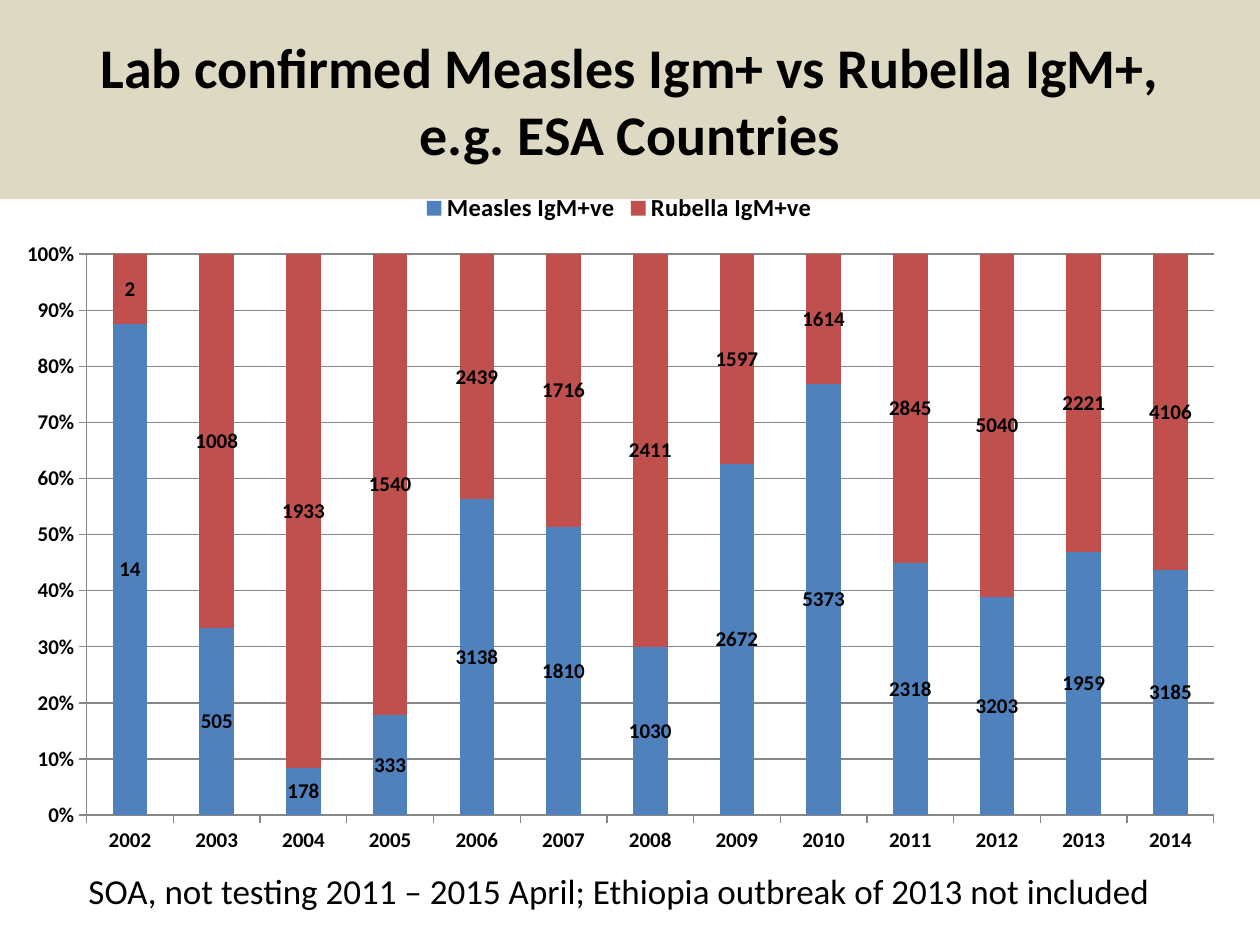
from dataclasses import dataclass

from lxml.etree import SubElement
from pptx import Presentation
from pptx.chart.data import CategoryChartData
from pptx.dml.color import RGBColor
from pptx.enum.chart import XL_CHART_TYPE as ChartType
from pptx.enum.chart import XL_LABEL_POSITION as LabelPosition
from pptx.enum.chart import XL_LEGEND_POSITION as LegendPosition
from pptx.enum.chart import XL_TICK_MARK as TickMark
from pptx.enum.shapes import MSO_SHAPE as Shape
from pptx.enum.text import MSO_ANCHOR as Anchor
from pptx.enum.text import PP_ALIGN as Align
from pptx.oxml.ns import qn
from pptx.util import Inches, Pt

FONT = "Calibri"
BLACK = RGBColor(0x00, 0x00, 0x00)
SAND = RGBColor(0xDD, 0xD9, 0xC3)
BLUE = RGBColor(0x4F, 0x81, 0xBD)
RED = RGBColor(0xC0, 0x50, 0x4D)
GRAY = RGBColor(0x86, 0x86, 0x86)


@dataclass(frozen=True)
class Infection:
    name: str
    cases: tuple[int, ...]
    color: RGBColor


YEARS = [str(year) for year in range(2002, 2015)]
INFECTIONS = (
    Infection(
        "Measles IgM+ve",
        (14, 505, 178, 333, 3138, 1810, 1030, 2672, 5373, 2318, 3203, 1959, 3185),
        BLUE,
    ),
    Infection(
        "Rubella IgM+ve",
        (2, 1008, 1933, 1540, 2439, 1716, 2411, 1597, 1614, 2845, 5040, 2221, 4106),
        RED,
    ),
)
PLOT_AREA = {"x": 0.07, "y": 0.11, "w": 0.91, "h": 0.82}


def style_font(font, size: int, bold: bool) -> None:
    font.name = FONT
    font.size = Pt(size)
    font.bold = bold
    font.color.rgb = BLACK


def write_text(shape, text: str, *, size: int, bold: bool = False,
               anchor: Anchor = Anchor.TOP) -> None:
    frame = shape.text_frame
    frame.word_wrap = True
    frame.vertical_anchor = anchor
    paragraph = frame.paragraphs[0]
    paragraph.text = text
    paragraph.alignment = Align.CENTER
    for run in paragraph.runs:
        style_font(run.font, size, bold)


def place_plot_area(chart) -> None:
    plot_area = chart.plots[0]._element.getparent()
    layout = plot_area.find(qn("c:layout"))
    if layout is None:
        layout = SubElement(plot_area, qn("c:layout"))
        plot_area.insert(0, layout)
    manual = SubElement(layout, qn("c:manualLayout"))
    settings = {"layoutTarget": "inner", "xMode": "edge", "yMode": "edge", **PLOT_AREA}
    for tag, value in settings.items():
        SubElement(manual, qn(f"c:{tag}")).set("val", str(value))


def style_axis(axis) -> None:
    axis.major_tick_mark = TickMark.OUTSIDE
    axis.minor_tick_mark = TickMark.NONE
    axis.format.line.color.rgb = GRAY
    style_font(axis.tick_labels.font, 12, True)


def add_case_chart(slide) -> None:
    data = CategoryChartData()
    data.categories = YEARS
    for infection in INFECTIONS:
        data.add_series(infection.name, infection.cases)
    chart = slide.shapes.add_chart(
        ChartType.COLUMN_STACKED_100,
        Inches(0), Inches(1.42), Inches(9.83), Inches(5.43), data,
    ).chart
    style_font(chart.font, 12, True)
    chart.has_title = False
    chart.has_legend = True
    chart.legend.position = LegendPosition.TOP
    chart.legend.include_in_layout = False
    style_font(chart.legend.font, 14, True)

    style_axis(chart.category_axis)
    shares = chart.value_axis
    style_axis(shares)
    shares.maximum_scale = 1
    shares.minimum_scale = 0
    shares.major_unit = 0.1
    shares.tick_labels.number_format = "0%"
    shares.tick_labels.number_format_is_linked = False
    shares.has_major_gridlines = True
    shares.major_gridlines.format.line.color.rgb = GRAY

    columns = chart.plots[0]
    columns.gap_width = 150
    columns.overlap = 100
    columns.vary_by_categories = False
    for series, infection in zip(columns.series, INFECTIONS):
        series.format.fill.solid()
        series.format.fill.fore_color.rgb = infection.color
        labels = series.data_labels
        labels.show_value = True
        labels.position = LabelPosition.CENTER
        style_font(labels.font, 12, True)
    place_plot_area(chart)


def add_heading(slide) -> None:
    heading = slide.shapes.add_shape(
        Shape.RECTANGLE, Inches(0), Inches(0), Inches(10), Inches(1.58)
    )
    heading.shadow.inherit = False
    heading.fill.solid()
    heading.fill.fore_color.rgb = SAND
    heading.line.fill.background()
    write_text(
        heading,
        "Lab confirmed Measles Igm+ vs Rubella IgM+,\ve.g. ESA Countries",
        size=32, bold=True, anchor=Anchor.MIDDLE,
    )


def add_footnote(slide) -> None:
    footnote = slide.shapes.add_textbox(
        Inches(0), Inches(6.85), Inches(9.83), Inches(0.44)
    )
    write_text(
        footnote,
        "SOA, not testing 2011 – 2015 April; Ethiopia outbreak of 2013 not included",
        size=20,
    )


def main() -> None:
    presentation = Presentation()
    presentation.slide_width = Inches(10)
    presentation.slide_height = Inches(7.5)
    slide = presentation.slides.add_slide(presentation.slide_layouts[6])
    add_case_chart(slide)
    add_heading(slide)
    add_footnote(slide)
    presentation.save("out.pptx")


if __name__ == "__main__":
    main()
